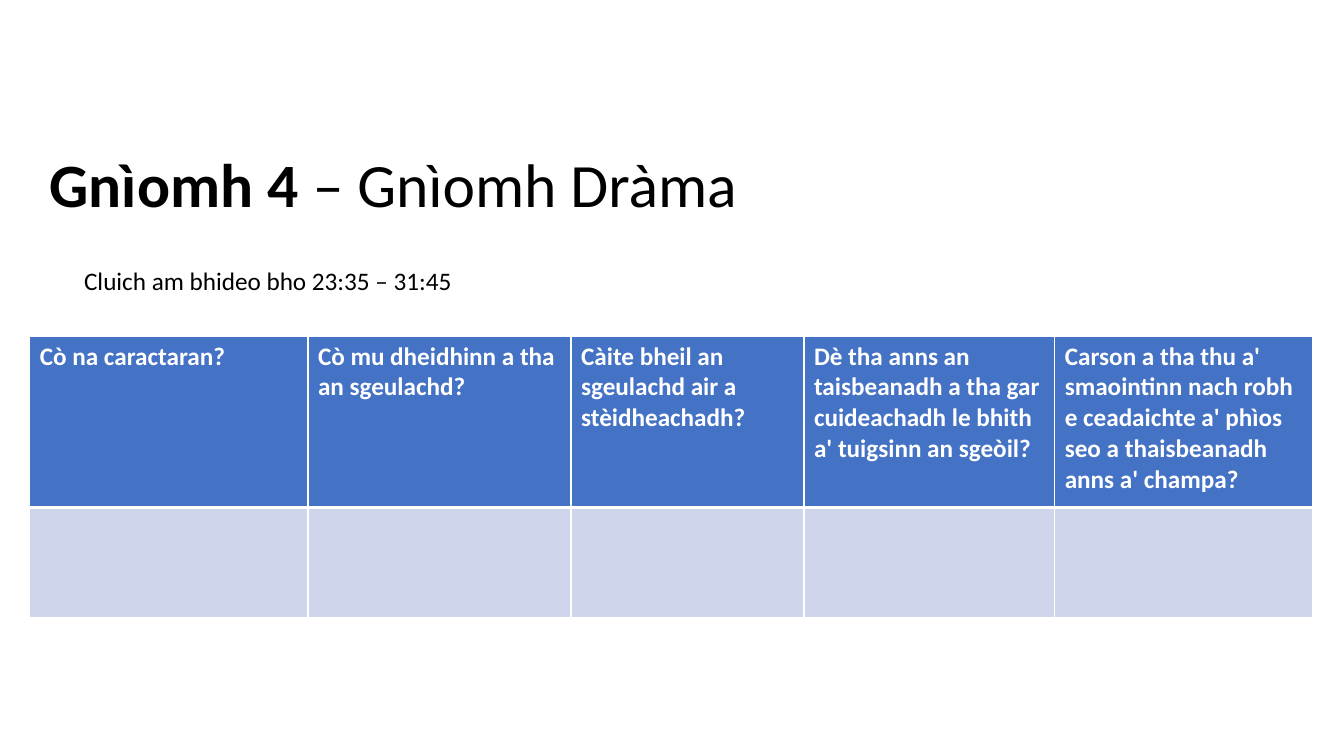
from lxml.etree import SubElement
from pptx import Presentation
from pptx.dml.color import RGBColor
from pptx.enum.text import MSO_ANCHOR, MSO_AUTO_SIZE, PP_ALIGN
from pptx.oxml.ns import qn
from pptx.util import Cm, Pt

COLORS = {"ink": "000000", "white": "FFFFFF", "head": "4472C4", "body": "CFD5EA"}
WIDTHS = [7.01, 6.63, 5.87, 6.32, 6.5]
HEIGHTS = [4.32, 2.77]
HEADS = [
    "Cò na caractaran?",
    "Cò mu dheidhinn a tha an sgeulachd?",
    "Càite bheil an sgeulachd air a stèidheachadh?",
    "Dè tha anns an taisbeanadh a tha gar cuideachadh le bhith a' tuigsinn an sgeòil?",
    "Carson a tha thu a' smaointinn nach robh e ceadaichte a' phìos seo a thaisbeanadh anns a' champa?",
]


def color(name):
    return RGBColor.from_string(COLORS[name])


def style(run, size, tint="ink", bold=False):
    run.font.name = "Calibri"
    run.font.size = Pt(size)
    run.font.bold = bold
    run.font.color.rgb = color(tint)


def place(shape, left, top, width, height):
    shape.left, shape.top = Cm(left), Cm(top)
    shape.width, shape.height = Cm(width), Cm(height)


def add_title(slide, strong, plain):
    title = slide.shapes.title
    place(title, 1, 3.55, 25.88, 2.14)
    frame = title.text_frame
    frame.auto_size = MSO_AUTO_SIZE.NONE
    frame.vertical_anchor = MSO_ANCHOR.TOP
    para = frame.paragraphs[0]
    para.alignment = PP_ALIGN.LEFT
    para.text = strong
    para.add_run().text = plain
    for run, bold in zip(para.runs, (True, False)):
        style(run, 44, bold=bold)


def add_note(slide, text):
    box = slide.shapes.add_textbox(Cm(1.87), Cm(6.55), Cm(20.14), Cm(1.03))
    frame = box.text_frame
    frame.word_wrap = True
    frame.text = text
    style(frame.paragraphs[0].runs[0], 18)


def set_edges(cell, above, below):
    props = cell._tc.get_or_add_tcPr()
    edges = {"lnL": 1, "lnR": 1, "lnT": above, "lnB": below}
    for spot, (tag, width) in enumerate(edges.items()):
        line = SubElement(props, qn(f"a:{tag}"), w=str(Pt(width)))
        fill = SubElement(line, qn("a:solidFill"))
        SubElement(fill, qn("a:srgbClr"), val=COLORS["white"])
        props.insert(spot, line)


def add_grid(slide):
    frame = slide.shapes.add_table(
        len(HEIGHTS), len(WIDTHS), Cm(0.75), Cm(8.47),
        Cm(sum(WIDTHS)), Cm(sum(HEIGHTS)))
    table = frame.table
    for row, height in zip(table.rows, HEIGHTS):
        row.height = Cm(height)
    for col, width in enumerate(WIDTHS):
        table.columns[col].width = Cm(width)
        head, body = table.cell(0, col), table.cell(1, col)
        head.text_frame.text = HEADS[col]
        style(head.text_frame.paragraphs[0].runs[0], 18, "white", True)
        for cell, tint, above, below in (
                (head, "head", 1, 3), (body, "body", 3, 1)):
            cell.fill.solid()
            cell.fill.fore_color.rgb = color(tint)
            set_edges(cell, above, below)


def main():
    deck = Presentation()
    deck.slide_width, deck.slide_height = Cm(33.87), Cm(19.05)
    slide = deck.slides.add_slide(deck.slide_layouts[5])
    add_grid(slide)
    add_note(slide, "Cluich am bhideo bho 23:35 – 31:45")
    add_title(slide, "Gnìomh 4 ", "– Gnìomh Dràma")
    deck.save("out.pptx")


if __name__ == "__main__":
    main()
